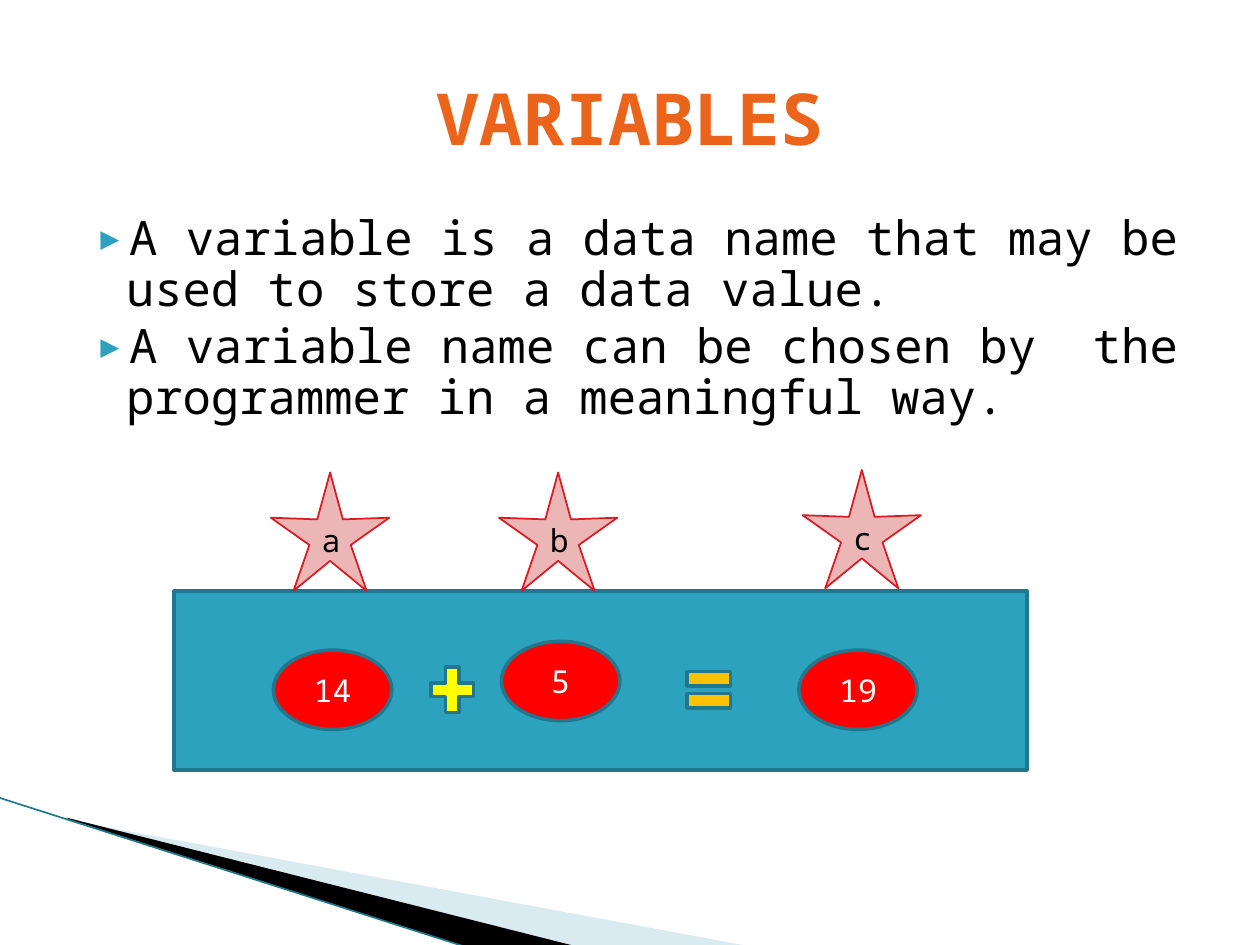
from dataclasses import dataclass
from typing import Optional

from lxml.etree import SubElement
from pptx import Presentation
from pptx.dml.color import RGBColor
from pptx.enum.shapes import MSO_CONNECTOR, MSO_SHAPE as Shape
from pptx.enum.text import MSO_ANCHOR as Anchor, MSO_AUTO_SIZE as AutoSize, PP_ALIGN as Align
from pptx.oxml.ns import qn
from pptx.util import Emu, Inches, Pt

FONT = "Noto Sans Mono"
WHITE = RGBColor(0xFF, 0xFF, 0xFF)
BLACK = RGBColor(0x00, 0x00, 0x00)
ORANGE = RGBColor(0xEB, 0x64, 0x1B)
TEAL = RGBColor(0x2D, 0xA2, 0xBF)
DARK_TEAL = RGBColor(0x21, 0x78, 0x8D)
PALE_BLUE = RGBColor(0xA0, 0xCB, 0xDC)
RED = RGBColor(0xFF, 0x00, 0x00)
YELLOW = RGBColor(0xFF, 0xFF, 0x00)
AMBER = RGBColor(0xFF, 0xC0, 0x00)
PINK = RGBColor(0xEC, 0xB5, 0xB6)
CRIMSON = RGBColor(0xDA, 0x1A, 0x23)

COLS, ROWS = 100, 75

prs = Presentation()
prs.slide_width, prs.slide_height = Inches(10), Inches(7.5)
slide = prs.slides.add_slide(prs.slide_layouts[1])


@dataclass(frozen=True)
class Style:
    kind: Shape
    fill: RGBColor
    line: RGBColor = DARK_TEAL
    weight: float = 2
    color: RGBColor = WHITE


@dataclass(frozen=True)
class Item:
    style: Style
    col: float
    row: float
    cols: float
    rows: float
    text: str = ""


@dataclass(frozen=True)
class Sweep:
    fill: RGBColor
    points: tuple
    alpha: Optional[int] = None


def x(cols: float) -> Emu:
    return Emu(round(prs.slide_width * cols / COLS))


def y(rows: float) -> Emu:
    return Emu(round(prs.slide_height * rows / ROWS))


def place(sp, col: float, row: float, cols: float, rows: float) -> None:
    sp.left, sp.top, sp.width, sp.height = x(col), y(row), x(cols), y(rows)


def write(p, text: str, *, size: float, color: RGBColor, bold: bool = False,
          align: Align = Align.CENTER) -> None:
    p.alignment = align
    r = p.add_run()
    r.text = text
    r.font.name, r.font.size, r.font.bold = FONT, Pt(size), bold
    r.font.color.rgb = color


def add_bullet(p) -> None:
    pPr = p._p.get_or_add_pPr()
    pPr.set("marL", str(Inches(0.4)))
    pPr.set("indent", str(Inches(-0.28)))
    SubElement(SubElement(pPr, qn("a:buClr")), qn("a:srgbClr"), val=str(TEAL))
    SubElement(pPr, qn("a:buSzPct"), val="68000")
    SubElement(pPr, qn("a:buFont"), typeface=FONT)
    SubElement(pPr, qn("a:buChar"), char="▶")


def draw_sweep(sweep: Sweep) -> None:
    start, *rest = [(x(c), y(r)) for c, r in sweep.points]
    fb = slide.shapes.build_freeform(*start)
    fb.add_line_segments(rest)
    sp = fb.convert_to_shape()
    sp.shadow.inherit = False
    sp.fill.solid()
    sp.fill.fore_color.rgb = sweep.fill
    sp.line.fill.background()
    if sweep.alpha:
        clr = sp._element.spPr.find(qn("a:solidFill"))[0]
        SubElement(clr, qn("a:alpha"), val=str(sweep.alpha * 1000))


def draw_item(item: Item) -> None:
    style = item.style
    sp = slide.shapes.add_shape(style.kind, x(item.col), y(item.row), x(item.cols), y(item.rows))
    sp.shadow.inherit = False
    sp.fill.solid()
    sp.fill.fore_color.rgb = style.fill
    sp.line.color.rgb = style.line
    sp.line.width = Pt(style.weight)
    if style.kind == Shape.STAR_5_POINT:
        sp.adjustments[0] = 0.175
    if item.text:
        tf = sp.text_frame
        tf.vertical_anchor = Anchor.MIDDLE
        write(tf.paragraphs[0], item.text, size=18, color=style.color)


SWEEPS = (
    Sweep(PALE_BLUE, ((5.5, 65.1), (59.5, 75.1), (45.6, 75.1), (5.5, 65)), alpha=40),
    Sweep(BLACK, ((5.3, 64.9), (45.7, 75.1), (37.2, 75.2), (5.4, 65))),
)
PANEL = Style(Shape.RECTANGLE, TEAL)
VALUE = Style(Shape.OVAL, RED)
PLUS = Style(Shape.MATH_PLUS, YELLOW)
EQUAL = Style(Shape.MATH_EQUAL, AMBER)
NAME = Style(Shape.STAR_5_POINT, PINK, CRIMSON, 1, BLACK)

VALUES = (("14", 21.7, 51.6), ("5", 39.8, 50.9), ("19", 63.4, 51.6))
NAMES = (("a", 21.5, 37.5), ("b", 39.6, 37.5), ("c", 63.7, 37.3))
ITEMS = (
    Item(PANEL, 13.8, 46.9, 67.7, 14.2),
    *(Item(VALUE, c, r, 9.4, 6.3, t) for t, c, r in VALUES),
    Item(PLUS, 33.6, 52.3, 4.6, 4.9),
    Item(EQUAL, 53.9, 52.3, 4.7, 4.9),
    *(Item(NAME, c, r, 9.4, 9.4, t) for t, c, r in NAMES),
)
BULLETS = (
    "A variable is a data name that may be used to store a data value.",
    "A variable name can be chosen by  the programmer in a meaningful way.",
)

title, body = slide.placeholders
place(title, 5, 3, 90, 12.5)
tf = title.text_frame
tf.auto_size = AutoSize.NONE
tf.vertical_anchor = Anchor.MIDDLE
write(tf.paragraphs[0], "VARIABLES", size=41, color=ORANGE, bold=True)

place(body, 5, 16.6, 90, 49)
tf = body.text_frame
tf.auto_size = AutoSize.NONE
for i, text in enumerate(BULLETS):
    p = tf.add_paragraph() if i else tf.paragraphs[0]
    p.line_spacing = 0.89
    p.space_before = Pt(4 if i else 0)
    add_bullet(p)
    write(p, text, size=27, color=BLACK, align=Align.LEFT)

for sweep in SWEEPS:
    draw_sweep(sweep)
edge = slide.shapes.add_connector(MSO_CONNECTOR.STRAIGHT, x(-0.1), y(63.3), x(37.1), y(75.2))
edge.line.color.rgb = DARK_TEAL
edge.line.width = Pt(0.95)
SubElement(edge._element.spPr, qn("a:effectLst"))
for item in ITEMS:
    draw_item(item)

prs.save("out.pptx")
